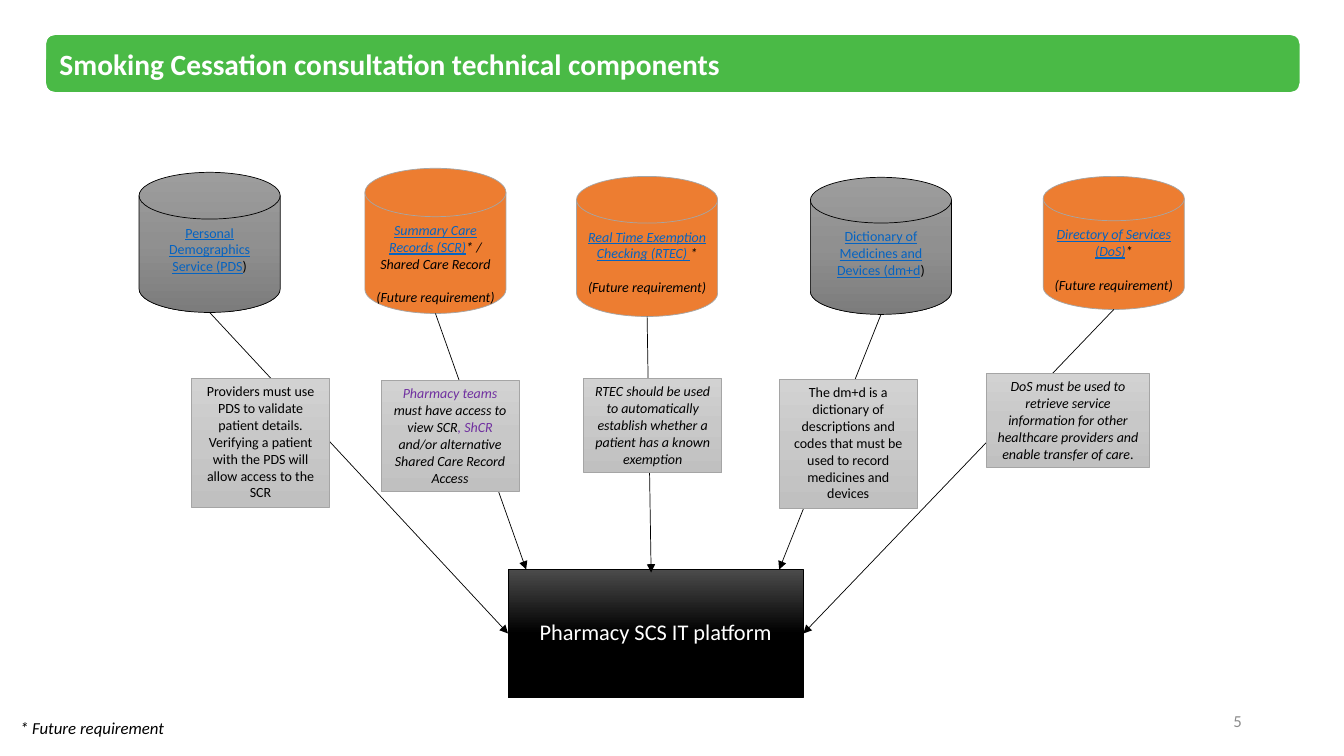
import copy
import pptx
import pptx.util
import pptx.dml.color
import pptx.enum.shapes
import pptx.enum.text
import pptx.oxml
import pptx.oxml.ns

SHAPE = pptx.enum.shapes.MSO_SHAPE
ALIGN = pptx.enum.text.PP_ALIGN
ANCHOR = pptx.enum.text.MSO_ANCHOR
qn = pptx.oxml.ns.qn
rgb = pptx.dml.color.RGBColor.from_string
Pt = pptx.util.Pt

COLORS = {
    "white": "FFFFFF", "black": "000000", "green": "4ABA46",
    "orange": "ED7D31", "border": "A5A5A5", "link": "0563C1",
    "purple": "7030A0", "page": "8C8C8C",
}
GRADIENTS = {
    "platform": ["4B4B4B", "000000", "000000"],
    "can": ["9D9D9D", "909090", "7C7C7C"],
    "note": ["D2D2D2", "C8C8C8", "C0C0C0"],
}

prs = pptx.Presentation()
prs.slide_width = pptx.util.Inches(13.333)
prs.slide_height = pptx.util.Inches(7.5)
COL = prs.slide_width / 80
ROW = prs.slide_height / 45
slide = prs.slides.add_slide(prs.slide_layouts[5])


def add_box(kind, cell, fill, line, weight=0.5):
    c, r, w, h = cell
    sp = slide.shapes.add_shape(kind, int(c * COL), int(r * ROW), int(w * COL), int(h * ROW))
    sp.shadow.inherit = False
    sp.line.color.rgb = rgb(COLORS[line])
    sp.line.width = Pt(weight)
    if fill in GRADIENTS:
        sp.fill.gradient()
        sp.fill.gradient_angle = 270
        stops = sp._element.spPr.find(".//" + qn("a:gsLst"))
        stops.append(copy.deepcopy(stops[1]))
        for stop, position, color in zip(sp.fill.gradient_stops, (0, 0.5, 1), GRADIENTS[fill]):
            stop.position = position
            stop.color.rgb = rgb(color)
    else:
        sp.fill.solid()
        sp.fill.fore_color.rgb = rgb(COLORS[fill])
    return sp


def write(sp, paragraphs, size, align=ALIGN.CENTER, anchor=ANCHOR.TOP):
    tf = sp.text_frame
    tf.word_wrap = True
    tf.vertical_anchor = anchor
    for i, runs in enumerate(paragraphs):
        p = tf.add_paragraph() if i else tf.paragraphs[0]
        p.alignment = align
        if i:
            p.space_before = Pt(size * 1.2)
        for text, color, style in runs:
            r = p.add_run()
            r.text = text
            r.font.name = "Calibri"
            r.font.size = Pt(size)
            r.font.color.rgb = rgb(COLORS[color])
            r.font.bold = "b" in style
            r.font.italic = "i" in style
            r.font.underline = "u" in style


platform = add_box(SHAPE.FLOWCHART_PROCESS, (30.24, 33.9, 17.58, 7.62), "platform", "black")
write(platform, [[("Pharmacy SCS IT platform", "white", "")]], 16, anchor=ANCHOR.MIDDLE)
p = platform.text_frame.paragraphs[0]
p.line_spacing = 0.9
p.space_before = Pt(10)

bar = add_box(SHAPE.ROUNDED_RECTANGLE, (2.7, 2.04, 74.7, 3.48), "green", "white", 1)
title = slide.shapes.title
title.left, title.top = int(3 * COL), int(2.22 * ROW)
title.width, title.height = int(74.16 * COL), int(3.12 * ROW)
bar._element.addnext(title._element)
write(title, [[("Smoking Cessation consultation technical components", "white", "b")]], 21,
      ALIGN.LEFT, ANCHOR.MIDDLE)
tf = title.text_frame
tf.auto_size = pptx.enum.text.MSO_AUTO_SIZE.NONE
tf.margin_left = tf.margin_right = tf.margin_top = tf.margin_bottom = pptx.util.Inches(0.09)

for cell, text, size, color, style, align, anchor in [
    ((56.52, 41.7, 18, 2.4), "5", 12, "page", "", ALIGN.RIGHT, ANCHOR.MIDDLE),
    ((0.6, 42.42, 40.62, 1.8), "* Future requirement", 12, "black", "i", ALIGN.LEFT, ANCHOR.TOP),
]:
    c, r, w, h = cell
    tb = slide.shapes.add_textbox(int(c * COL), int(r * ROW), int(w * COL), int(h * ROW))
    write(tb, [[(text, color, style)]], size, align, anchor)

future = [("(Future requirement)", "black", "i")]
CAN_W = 8.4
NOTE_W = 8.22

services = [
    dict(can=(8.28, 10.26, 8.34), fill="can", end=1,
         label=[[("Personal Demographics Service (PDS", "link", "u"), (")", "black", "")]],
         note=(11.4, 22.5, NOTE_W, 7.68),
         text=[("Providers must use PDS to validate patient details. Verifying a patient "
                "with the PDS will allow access to the SCR", "black", "")]),
    dict(can=(21.72, 10.02, 8.64), fill="orange", end=(31.32, 33.9),
         label=[[("Summary Care Records (SCR)", "link", "iu"),
                 ("* / Shared Care Record", "black", "i")], future],
         note=(22.68, 22.62, NOTE_W, 6.66),
         text=[("Pharmacy teams ", "purple", "i"),
               ("must have access to view SCR", "black", "i"),
               (", ShCR ", "purple", "i"),
               ("and/or alternative Shared Care Record Access", "black", "i")]),
    dict(can=(34.32, 10.5, 8.34), fill="orange", end=(38.76, 34.08),
         label=[[("Real Time Exemption Checking (RTEC) ", "link", "iu"),
                 ("*", "black", "i")], future],
         note=(34.74, 22.5, NOTE_W, 5.64),
         text=[("RTEC should be used to automatically establish whether a patient has "
                "a known exemption", "black", "i")]),
    dict(can=(48.24, 10.56, 8.16), fill="can", end=(46.38, 33.9),
         label=[[("Dictionary of Medicines and Devices (dm+d", "link", "u"), (")", "black", "")]],
         note=(46.38, 22.56, NOTE_W, 7.68),
         text=[("The dm+d is a dictionary of descriptions and codes that must be used to "
                "record medicines and devices", "black", "")]),
    dict(can=(62.1, 10.5, 7.92), fill="orange", end=3,
         label=[[("Directory of Services (DoS)", "link", "iu"), ("*", "black", "i")], future],
         note=(58.74, 22.2, 9.66, 5.64),
         text=[("DoS must be used to retrieve service information for other healthcare "
                "providers and enable transfer of care", "black", "i"), (".", "black", "")]),
]

for s in services:
    c, r, h = s["can"]
    can = add_box(SHAPE.FLOWCHART_MAGNETIC_DISK, (c, r, CAN_W, h), s["fill"],
                  "black" if s["fill"] == "can" else "border")
    write(can, s["label"], 10)

    joined = isinstance(s["end"], int)
    end_c, end_r = (0, 0) if joined else s["end"]
    arrow = slide.shapes.add_connector(
        pptx.enum.shapes.MSO_CONNECTOR.STRAIGHT, int((c + CAN_W / 2) * COL), int((r + h) * ROW),
        int(end_c * COL), int(end_r * ROW))
    if joined:
        arrow.end_connect(platform, s["end"])
    arrow.line.color.rgb = rgb(COLORS["black"])
    arrow.line.width = Pt(0.5)
    ln = arrow.line._get_or_add_ln()
    ln.append(pptx.oxml.parse_xml(
        '<a:tailEnd xmlns:a="http://schemas.openxmlformats.org/drawingml/2006/main" type="triangle"/>'))
    ln.addnext(pptx.oxml.parse_xml(
        '<a:effectLst xmlns:a="http://schemas.openxmlformats.org/drawingml/2006/main"/>'))

    note = add_box(SHAPE.RECTANGLE, s["note"], "note", "border")
    write(note, [s["text"]], 10)

prs.save("out.pptx")
